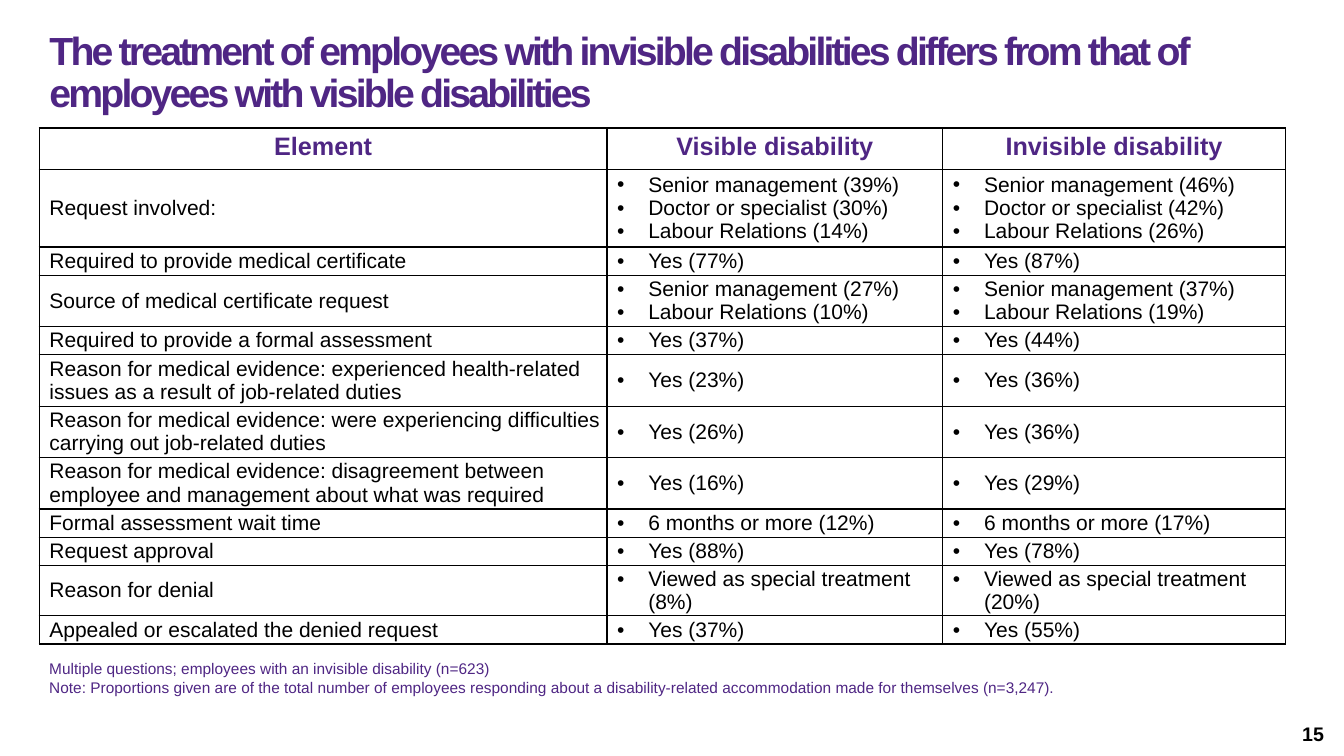
from pptx import Presentation
from pptx.dml.color import RGBColor
from pptx.enum.text import MSO_ANCHOR as ANCHOR, PP_ALIGN as ALIGN
from pptx.oxml import parse_xml
from pptx.oxml.ns import nsdecls
from pptx.util import Inches, Pt

PURPLE, BLACK, WHITE = "4F2684", "000000", "FFFFFF"
TITLE = ("The treatment of employees with invisible disabilities differs from that of "
         "employees with visible disabilities")
HEADINGS = ["Element", "Visible disability", "Invisible disability"]
ELEMENTS = [
    ("Request involved:", 0.77, [("Senior management", 39, 46), ("Doctor or specialist", 30, 42),
                                 ("Labour Relations", 14, 26)]),
    ("Required to provide medical certificate", 0.28, [("Yes", 77, 87)]),
    ("Source of medical certificate request", 0.51, [("Senior management", 27, 37),
                                                     ("Labour Relations", 10, 19)]),
    ("Required to provide a formal assessment", 0.28, [("Yes", 37, 44)]),
    ("Reason for medical evidence: experienced health-related issues as a result of "
     "job-related duties", 0.51, [("Yes", 23, 36)]),
    ("Reason for medical evidence: were experiencing difficulties carrying out "
     "job-related duties", 0.51, [("Yes", 26, 36)]),
    ("Reason for medical evidence: disagreement between employee and management about "
     "what was required", 0.51, [("Yes", 16, 29)]),
    ("Formal assessment wait time", 0.28, [("6 months or more", 12, 17)]),
    ("Request approval", 0.28, [("Yes", 88, 78)]),
    ("Reason for denial", 0.47, [("Viewed as special treatment", 8, 20)]),
    ("Appealed or escalated the denied request", 0.28, [("Yes", 37, 55)]),
]
NOTES = [
    "Multiple questions; employees with an invisible disability (n=623)",
    "Note: Proportions given are of the total number of employees responding about a "
    "disability-related accommodation made for themselves (n=3,247).",
]
PAGE = "15"
COLUMN_WIDTHS = [5.63, 3.33, 3.4]
HEADING_HEIGHT = 0.41
INDENT = Inches(0.31)


def color(value):
    return RGBColor.from_string(value)


def write(frame, lines, size, ink, bold=False, align=ALIGN.LEFT, bullet=False, spacing=None):
    frame.word_wrap = True
    for i, line in enumerate(lines):
        paragraph = frame.paragraphs[0] if i == 0 else frame.add_paragraph()
        paragraph.alignment = align
        if bullet:
            props = paragraph._p.get_or_add_pPr()
            props.set("marL", str(INDENT))
            props.set("indent", str(-INDENT))
            props.append(parse_xml(f'<a:buFont {nsdecls("a")} typeface="Arial"/>'))
            props.append(parse_xml(f'<a:buChar {nsdecls("a")} char="•"/>'))
        run = paragraph.add_run()
        run.text = line
        run.font.name, run.font.size, run.font.bold = "Arial", Pt(size), bold
        run.font.color.rgb = color(ink)
        if spacing is not None:
            run._r.get_or_add_rPr().set("spc", str(spacing * 100))


def text_box(slide, box, lines, *style, **options):
    frame = slide.shapes.add_textbox(*map(Inches, box)).text_frame
    write(frame, lines, *style, **options)
    return frame


def style_cell(cell):
    cell.fill.solid()
    cell.fill.fore_color.rgb = color(WHITE)
    props = cell._tc.get_or_add_tcPr()
    for i, side in enumerate(("lnL", "lnR", "lnT", "lnB")):
        props.insert(i, parse_xml(
            f'<a:{side} {nsdecls("a")} w="{Pt(1)}"><a:solidFill>'
            f'<a:srgbClr val="{BLACK}"/></a:solidFill></a:{side}>'))


def fill_table(slide):
    heights = [HEADING_HEIGHT] + [height for _, height, _ in ELEMENTS]
    area = (0.39, 1.27, sum(COLUMN_WIDTHS), sum(heights))
    table = slide.shapes.add_table(len(heights), len(COLUMN_WIDTHS), *map(Inches, area)).table
    table.horz_banding = False
    for column, width in zip(table.columns, COLUMN_WIDTHS):
        column.width = Inches(width)
    for row, height in zip(table.rows, heights):
        row.height = Inches(height)
    for c, heading in enumerate(HEADINGS):
        cell = table.cell(0, c)
        style_cell(cell)
        write(cell.text_frame, [heading], 18, PURPLE, bold=True, align=ALIGN.CENTER)
    for r, (label, _, answers) in enumerate(ELEMENTS, 1):
        visible = [f"{answer} ({share}%)" for answer, share, _ in answers]
        invisible = [f"{answer} ({share}%)" for answer, _, share in answers]
        for c, lines in enumerate(([label], visible, invisible)):
            cell = table.cell(r, c)
            style_cell(cell)
            cell.vertical_anchor = ANCHOR.MIDDLE
            cell.margin_left = Inches(0.1)
            cell.margin_right = cell.margin_top = cell.margin_bottom = 0
            write(cell.text_frame, lines, 15, BLACK, bullet=c > 0)


def main():
    deck = Presentation()
    deck.slide_width, deck.slide_height = Inches(13.33), Inches(7.5)
    slide = deck.slides.add_slide(deck.slide_layouts[6])

    title = text_box(slide, (0.49, 0.29, 11.82, 0.89), [TITLE], 28, PURPLE, bold=True, spacing=-2)
    title.margin_left = title.margin_right = 0
    title.margin_top = title.margin_bottom = Inches(0.02)
    title.paragraphs[0].line_spacing = 0.9

    fill_table(slide)
    text_box(slide, (0.39, 6.49, 10.43, 0.47), NOTES, 11, PURPLE)
    page = text_box(slide, (10.23, 7.08, 3, 0.4), [PAGE], 14, BLACK, bold=True, align=ALIGN.RIGHT)
    page.vertical_anchor = ANCHOR.MIDDLE
    deck.save("out.pptx")


if __name__ == "__main__":
    main()
